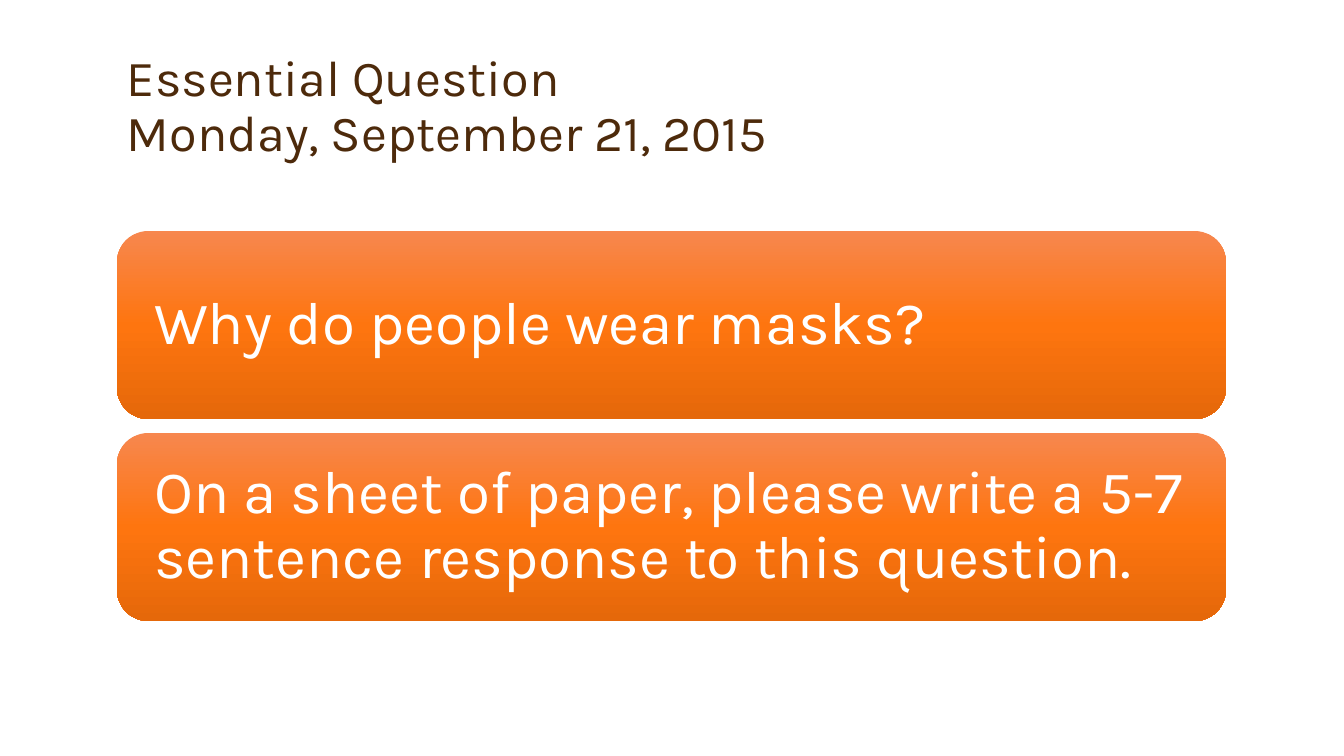
from copy import deepcopy

from pptx import Presentation
from pptx.dml.color import RGBColor
from pptx.enum.shapes import MSO_SHAPE
from pptx.enum.text import MSO_ANCHOR, PP_ALIGN
from pptx.oxml.ns import qn
from pptx.util import Emu, Pt

PX = 914400 / 100.8
BROWN = RGBColor(0x4D, 0x2A, 0x0B)
WHITE = RGBColor(0xFF, 0xFF, 0xFF)
ORANGES = (
    RGBColor(0xF7, 0x87, 0x4E),
    RGBColor(0xFE, 0x75, 0x0F),
    RGBColor(0xE5, 0x68, 0x0A),
)
LEFT, WIDTH = 117, 1109
CARD_TOP, CARD_HEIGHT, CARD_GAP = 231, 188, 14
CARDS = (
    "Why do people wear masks?",
    "On a sheet of paper, please write a 5-7 sentence response to this question.",
)


def px(n):
    return Emu(round(n * PX))


def set_text(sp, text, size, color, anchor):
    tf = sp.text_frame
    tf.word_wrap = True
    tf.vertical_anchor = anchor
    p = tf.paragraphs[0]
    p.text = text
    p.alignment = PP_ALIGN.LEFT
    p.line_spacing = 0.9
    p.font.name = "Karla"
    p.font.size = Pt(size)
    p.font.color.rgb = color


def fill_gradient(sp, colors):
    """Fill from top to bottom with evenly spaced colors."""
    sp.fill.gradient()
    sp.fill.gradient_angle = 270
    stop_list = next(sp._element.spPr.iter(qn("a:gsLst")))
    while len(stop_list) < len(colors):
        stop_list.append(deepcopy(stop_list[0]))
    for i, (stop, color) in enumerate(zip(sp.fill.gradient_stops, colors)):
        stop.position = i / (len(colors) - 1)
        stop.color.rgb = color


def add_title(s, text):
    sp = s.shapes.add_textbox(px(LEFT), px(33), px(WIDTH), px(134))
    set_text(sp, text, 36, BROWN, MSO_ANCHOR.BOTTOM)


def add_card(s, top, text):
    sp = s.shapes.add_shape(
        MSO_SHAPE.ROUNDED_RECTANGLE, px(LEFT), px(top), px(WIDTH), px(CARD_HEIGHT)
    )
    sp.shadow.inherit = False
    sp.line.fill.background()
    fill_gradient(sp, ORANGES)
    tf = sp.text_frame
    tf.margin_left = tf.margin_right = px(28)
    tf.margin_top = tf.margin_bottom = px(18)
    set_text(sp, text, 43, WHITE, MSO_ANCHOR.MIDDLE)


def main():
    prs = Presentation()
    prs.slide_width, prs.slide_height = px(1344), px(756)
    s = prs.slides.add_slide(prs.slide_layouts[6])
    add_title(s, "Essential Question\vMonday, September 21, 2015")
    for i, text in enumerate(CARDS):
        add_card(s, CARD_TOP + i * (CARD_HEIGHT + CARD_GAP), text)
    prs.save("out.pptx")


if __name__ == "__main__":
    main()
